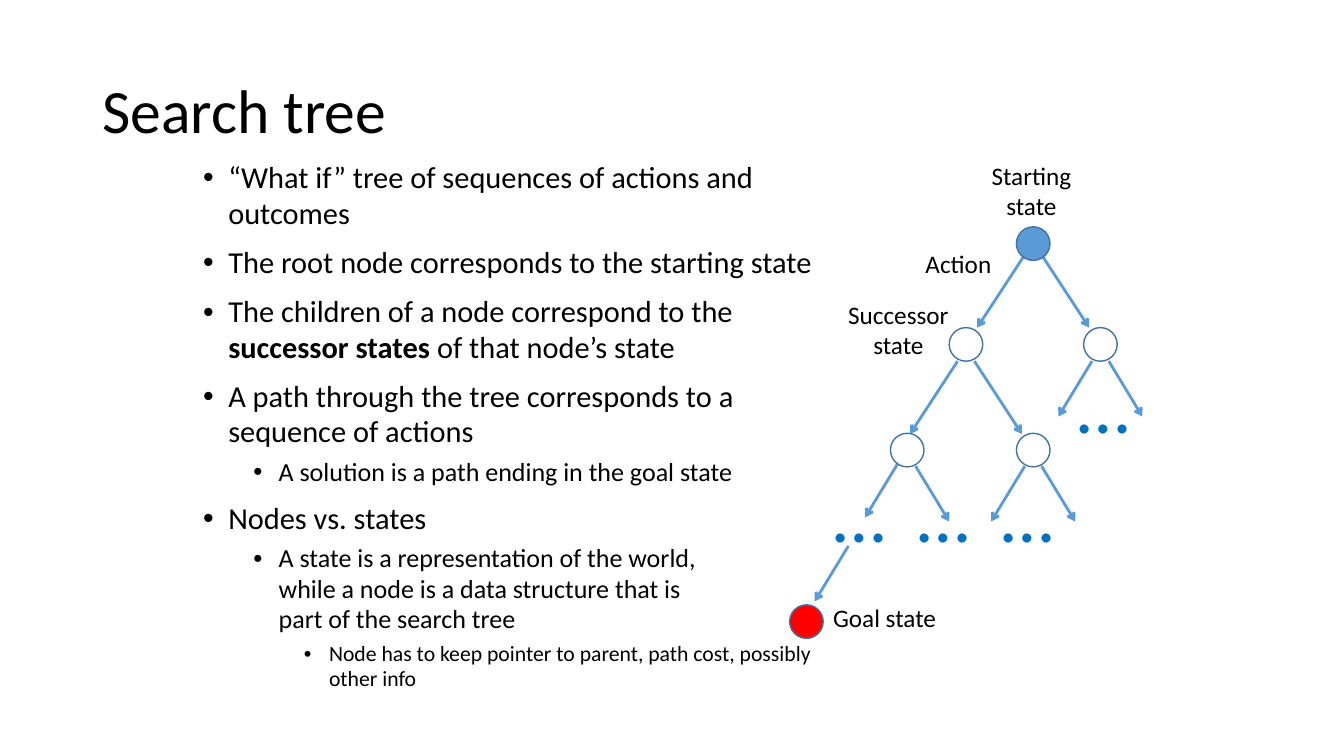
"""Build the search tree slide: bullet list on the left, tree diagram on the right."""
from lxml.etree import SubElement
from pptx import Presentation
from pptx.dml.color import RGBColor
from pptx.enum.shapes import MSO_CONNECTOR as Connector, MSO_SHAPE as Preset
from pptx.enum.text import MSO_ANCHOR as Anchor, MSO_AUTO_SIZE as AutoSize, PP_ALIGN as Align
from pptx.oxml.ns import qn
from pptx.util import Pt

BLACK = RGBColor(0x00, 0x00, 0x00)
WHITE = RGBColor(0xFF, 0xFF, 0xFF)
RED = RGBColor(0xFF, 0x00, 0x00)
BLUE = RGBColor(0x5B, 0x9B, 0xD5)
OUTLINE = RGBColor(0x43, 0x73, 0x9E)
DOTS = RGBColor(0x00, 0x70, 0xC0)


def add_span(para, text, size, color=BLACK, bold=False):
    span = para.add_run()
    span.text = text
    span.font.name = "Calibri"
    span.font.size = Pt(size)
    span.font.bold = bold
    span.font.color.rgb = color


def add_label(page, text, left, top, width, height, size=18, color=BLACK, wrap=False):
    box = page.shapes.add_textbox(Pt(left), Pt(top), Pt(width), Pt(height))
    box.text_frame.word_wrap = wrap
    box.text_frame.auto_size = AutoSize.SHAPE_TO_FIT_TEXT
    para = box.text_frame.paragraphs[0]
    para.alignment = Align.CENTER if wrap else Align.LEFT
    add_span(para, text, size, color)


deck = Presentation()
deck.slide_width, deck.slide_height = Pt(960), Pt(540)
page = deck.slides.add_slide(deck.slide_layouts[5])

title = page.shapes.title
title.left, title.top, title.width, title.height = Pt(66), Pt(28.8), Pt(828), Pt(104.4)
title.text_frame.vertical_anchor = Anchor.MIDDLE
heading = title.text_frame.paragraphs[0]
heading.alignment = Align.LEFT
heading.line_spacing = 0.9
add_span(heading, "Search tree", 44)

SIZES = [21.7, 18.6, 15.5]
SPACES = [10, 5, 5]
BULLETS = [
    (0, ["“What if” tree of sequences of actions and outcomes"]),
    (0, ["The root node corresponds to the starting state"]),
    (0, ["The children of a node correspond to the ", "successor states", " of that node’s state"]),
    (0, ["A path through the tree corresponds to a sequence of actions"]),
    (1, ["A solution is a path ending in the goal state"]),
    (0, ["Nodes vs. states"]),
    (1, ["A state is a representation of the world, \n"
         "while a node is a data structure that is \n"
         "part of the search tree"]),
    (2, ["Node has to keep pointer to parent, path cost, possibly other info"]),
]
body = page.shapes.add_textbox(Pt(138), Pt(111), Pt(468), Pt(447))
body.text_frame.word_wrap = True
for index, (level, parts) in enumerate(BULLETS):
    para = body.text_frame.add_paragraph() if index else body.text_frame.paragraphs[0]
    para.level = level
    para.space_before = Pt(SPACES[level])
    para.line_spacing = 0.97
    props = para._p.get_or_add_pPr()
    props.set("marL", str(Pt(18 + 36 * level)))
    props.set("indent", str(Pt(-18)))
    SubElement(props, qn("a:buFont"), typeface="Arial")
    SubElement(props, qn("a:buChar"), char="•")
    for part in parts:
        for number, line in enumerate(part.split("\n")):
            if number:
                para.add_line_break()
            add_span(para, line, SIZES[level], bold=part == "successor states")

for left, top in [(588, 330), (648, 330), (708, 330), (762.5, 252)]:
    add_label(page, "…", left, top, 53.3, 72.7, 54, DOTS)

LEFT, RIGHT = -1, 1
LONG, SHORT = (34, 52), (24, 39.5)
BRANCHES = [
    (738, 182, [LEFT, RIGHT], LONG),
    (690, 258, [LEFT, RIGHT], LONG),
    (786, 258, [LEFT, RIGHT], SHORT),
    (648, 330, [LEFT], SHORT),
    (648, 333, [RIGHT], SHORT),
    (738, 333, [LEFT, RIGHT], SHORT),
    (612, 390, [LEFT], SHORT),
]
for center, top, sides, (reach, drop) in BRANCHES:
    for side in sides:
        start = center + 6 * side
        arrow = page.shapes.add_connector(
            Connector.STRAIGHT, Pt(start), Pt(top), Pt(start + reach * side), Pt(top + drop))
        arrow.line.color.rgb = BLUE
        arrow.line.width = Pt(2)
        SubElement(arrow.line._get_or_add_ln(), qn("a:tailEnd"), type="arrow")
        SubElement(arrow._element.spPr, qn("a:effectLst"))

NODES = [
    (726, 162, BLUE),
    (678, 234, WHITE),
    (774, 234, WHITE),
    (636, 309.5, WHITE),
    (726, 309.5, WHITE),
    (564, 432, RED),
]
for left, top, color in NODES:
    node = page.shapes.add_shape(Preset.OVAL, Pt(left), Pt(top), Pt(24), Pt(24))
    node.shadow.inherit = False
    node.fill.solid()
    node.fill.fore_color.rgb = color
    node.line.color.rgb = OUTLINE
    node.line.width = Pt(1)

add_label(page, "Starting state", 693.5, 111, 86.5, 51, wrap=True)
add_label(page, "Successor state", 593.5, 210, 96.5, 51, wrap=True)
add_label(page, "Action", 654, 174, 64, 29)
add_label(page, "Goal state", 588, 427, 88.5, 29)

deck.save("out.pptx")
